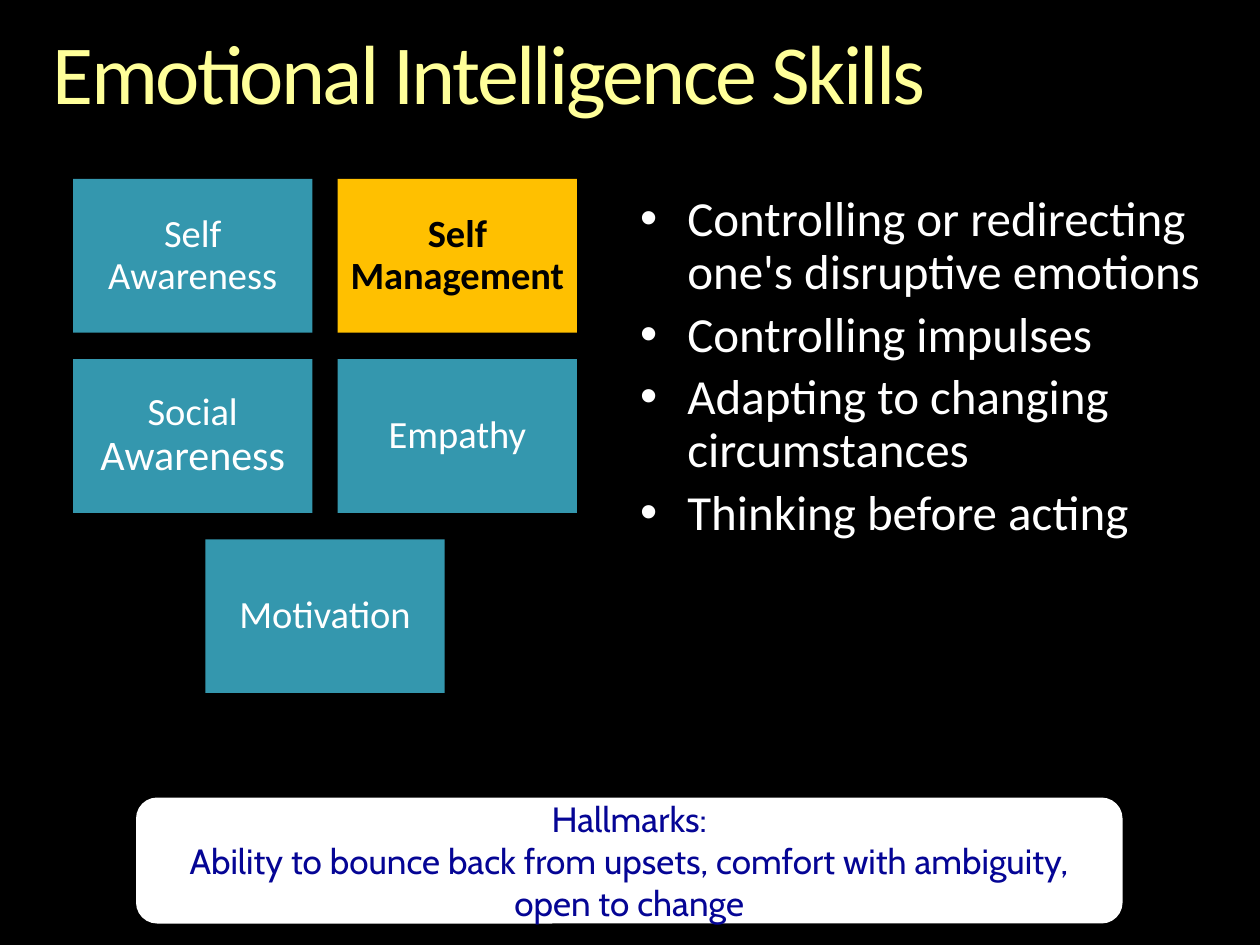
"""Build the slide on emotional intelligence skills."""
from pptx import Presentation
from pptx import util as u
from pptx.dml.color import RGBColor
from pptx.enum import shapes, text

HUES = {"back": "000000", "title": "FFFF99", "body": "FFFFFF", "box": "3497AE",
        "pick": "FFC000", "dark": "000000", "note": "050595"}
TITLE = "Emotional Intelligence Skills"
POINTS = ["Controlling or redirecting one's disruptive emotions",
          "Controlling impulses",
          "Adapting to changing circumstances",
          "Thinking before acting"]
SKILLS = [[[("Self Awareness", 22)], [("Self Management", 22)]],
          [[("Social ", 22), ("Awareness", 24)], [("Empathy", 22)]],
          [[("Motivation", 22)]]]
PICK = "Self Management"
NOTES = ["Hallmarks:",
         "Ability to bounce back from upsets, comfort with ambiguity, open to change"]
LEFT, TOP, WIDE, HIGH, GAP = 0.58, 1.42, 1.9, 1.22, 0.2
COLS, STEP = 2, 1.43


def hue(name):
    return RGBColor.from_string(HUES[name])


def put(shape, x, y, w, h):
    shape.left, shape.top, shape.width, shape.height = map(u.Inches, (x, y, w, h))


def setup(shape, pad, anchor):
    frame = shape.text_frame
    frame.word_wrap = True
    frame.auto_size = text.MSO_AUTO_SIZE.NONE
    frame.vertical_anchor = anchor
    frame.margin_left = frame.margin_right = u.Inches(pad[0])
    frame.margin_top = frame.margin_bottom = u.Inches(pad[1])
    return frame


def write(frame, paras, tint, face="Calibri", align=text.PP_ALIGN.LEFT,
          line=0.9, before=0, bold=False):
    for i, runs in enumerate(paras):
        para = frame.add_paragraph() if i else frame.paragraphs[0]
        para.alignment, para.line_spacing = align, line
        para.space_before = u.Pt(before if i else 0)
        for words, size in runs:
            run = para.add_run()
            run.text = words
            run.font.name, run.font.size, run.font.bold = face, u.Pt(size), bold
            run.font.color.rgb = hue(tint)


def block(slide, kind, spot, fill):
    shape = slide.shapes.add_shape(kind, *map(u.Inches, spot))
    shape.shadow.inherit = False
    shape.fill.solid()
    shape.fill.fore_color.rgb = hue(fill)
    shape.line.fill.background()
    return shape


def main():
    deck = Presentation()
    deck.slide_width, deck.slide_height = u.Inches(10), u.Inches(7.5)
    slide = deck.slides.add_slide(deck.slide_layouts[1])
    slide.background.fill.solid()
    slide.background.fill.fore_color.rgb = hue("back")
    top, mid = text.MSO_ANCHOR.TOP, text.MSO_ANCHOR.MIDDLE
    center = text.PP_ALIGN.CENTER

    title, body = slide.placeholders
    put(title, 0.42, 0.25, 9.17, 0.73)
    frame = setup(title, (0, 0), top)
    write(frame, [[(TITLE, 48)]], "title")
    frame.paragraphs[0].runs[0].font._element.set("spc", "-150")
    put(body, 5.08, 1.54, 4.5, 3.35)
    write(setup(body, (0, 0), top), [[(p, 28)] for p in POINTS], "body", before=5.6)

    for r, row in enumerate(SKILLS):
        inset = (COLS - len(row)) * (WIDE + GAP) / 2
        for c, runs in enumerate(row):
            pick = runs[0][0] == PICK
            spot = (LEFT + inset + c * (WIDE + GAP), TOP + r * STEP, WIDE, HIGH)
            box = block(slide, shapes.MSO_SHAPE.RECTANGLE, spot, "pick" if pick else "box")
            write(setup(box, (0.09, 0.09), mid), [runs], "dark" if pick else "body",
                  align=center, bold=pick)

    note = block(slide, shapes.MSO_SHAPE.ROUNDED_RECTANGLE, (1.08, 6.33, 7.83, 1), "body")
    write(setup(note, (0.1, 0.05), mid), [[(n, 20)] for n in NOTES], "note",
          face="Cabin", align=center, line=1.0)
    deck.save("out.pptx")


if __name__ == "__main__":
    main()
